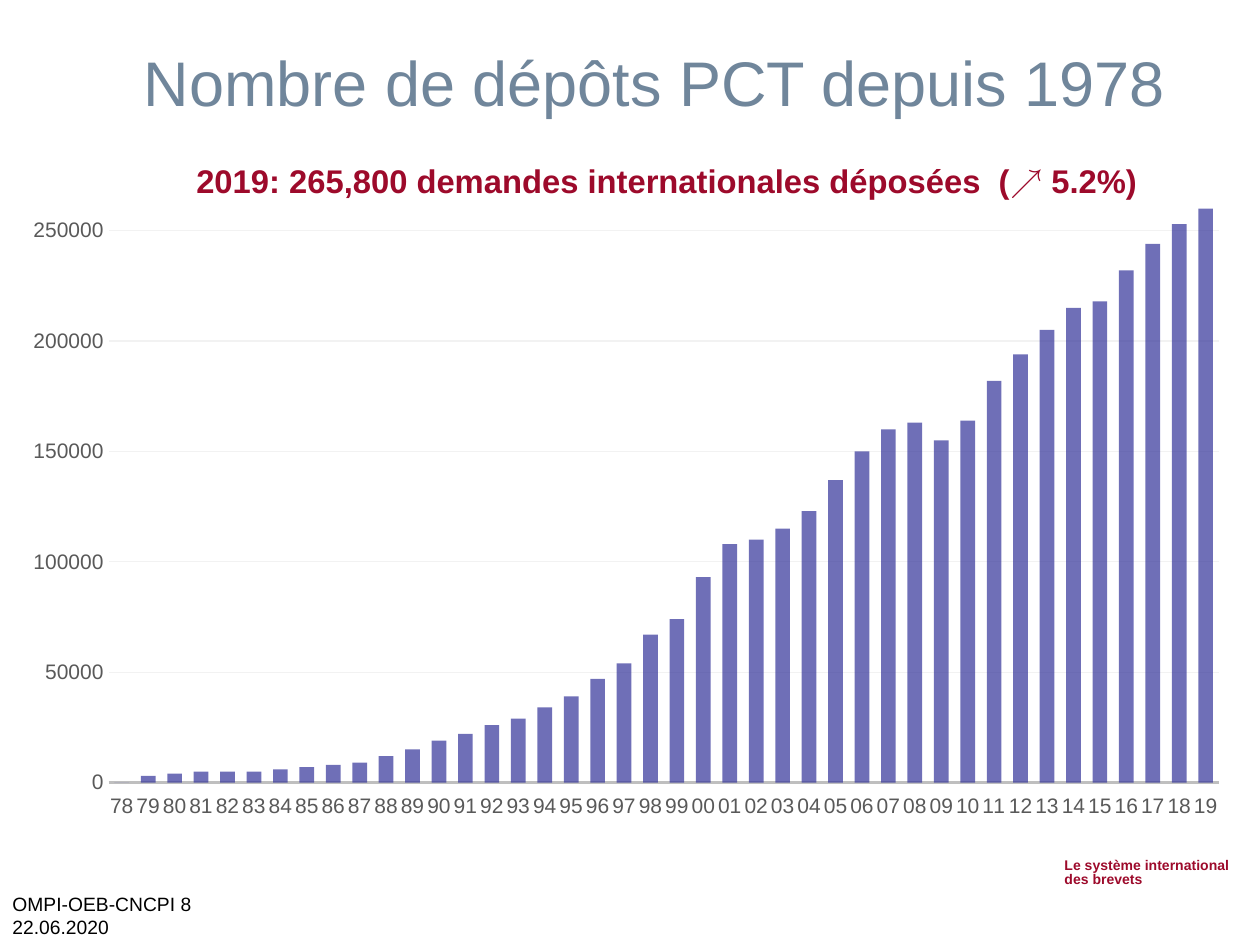
import lxml.etree
import pptx
import pptx.chart.data
import pptx.dml.color
import pptx.enum.chart
import pptx.enum.text
import pptx.oxml
import pptx.oxml.ns
import pptx.util
from pptx.util import Inches

FONT = "Arial"
RED = "9D0A2B"
AXIS_TEXT = "595959"
FILINGS_IN_THOUSANDS = [
    0, 3, 4, 5, 5, 5, 6, 7, 8, 9, 12, 15, 19, 22,
    26, 29, 34, 39, 47, 54, 67, 74, 93, 108, 110, 115, 123, 137,
    150, 160, 163, 155, 164, 182, 194, 205, 215, 218, 232, 244, 253, 266,
]


def color(hex_value):
    return pptx.dml.color.RGBColor.from_string(hex_value)


def format_font(font, size, hex_value, bold=False):
    font.name = FONT
    font.size = pptx.util.Pt(size)
    font.bold = bold
    font.color.rgb = color(hex_value)


def write_text(text_frame, text, *, size, hex_value, bold=False, align=None,
               anchor=pptx.enum.text.MSO_ANCHOR.TOP, line_spacing=None, wrap=True):
    """Write one paragraph for each line of text."""
    text_frame.auto_size = pptx.enum.text.MSO_AUTO_SIZE.NONE
    text_frame.word_wrap = wrap
    text_frame.vertical_anchor = anchor
    text_frame.text = text
    for paragraph in text_frame.paragraphs:
        paragraph.alignment = align
        paragraph.line_spacing = line_spacing
        for run in paragraph.runs:
            format_font(run.font, size, hex_value, bold)


def add_text(slide, text, left, top, width, height, **text_format):
    shape = slide.shapes.add_textbox(
        Inches(left), Inches(top), Inches(width), Inches(height))
    write_text(shape.text_frame, text, **text_format)


def add_title(slide, text):
    title = slide.shapes.title
    title.left, title.top = Inches(0.51), Inches(0.21)
    title.width, title.height = Inches(9.37), Inches(0.87)
    write_text(title.text_frame, text, size=36, hex_value="70869B",
               align=pptx.enum.text.PP_ALIGN.CENTER,
               anchor=pptx.enum.text.MSO_ANCHOR.MIDDLE)


def set_plot_area(chart, left, top, width, height):
    """Place the inner plot area, in fractions of the chart."""
    plot_area = chart._chartSpace.chart.plotArea
    for old_layout in plot_area.findall(pptx.oxml.ns.qn("c:layout")):
        plot_area.remove(old_layout)
    layout = pptx.oxml.parse_xml(
        f'<c:layout {pptx.oxml.ns.nsdecls("c")}><c:manualLayout>'
        '<c:layoutTarget val="inner"/><c:xMode val="edge"/><c:yMode val="edge"/>'
        f'<c:x val="{left}"/><c:y val="{top}"/><c:w val="{width}"/><c:h val="{height}"/>'
        '</c:manualLayout></c:layout>')
    plot_area.insert(0, layout)


def set_opacity(fill, percent):
    color_element = fill._xPr.find(".//" + pptx.oxml.ns.qn("a:srgbClr"))
    alpha = lxml.etree.SubElement(color_element, pptx.oxml.ns.qn("a:alpha"))
    alpha.set("val", str(percent * 1000))


def format_axes(chart):
    for axis in (chart.category_axis, chart.value_axis):
        axis.major_tick_mark = pptx.enum.chart.XL_TICK_MARK.NONE
        axis.minor_tick_mark = pptx.enum.chart.XL_TICK_MARK.NONE
        format_font(axis.tick_labels.font, 12, AXIS_TEXT)

    category_axis = chart.category_axis
    category_axis.tick_label_position = pptx.enum.chart.XL_TICK_LABEL_POSITION.LOW
    category_axis.format.line.color.rgb = color("BFBFBF")
    category_axis.format.line.width = pptx.util.Pt(1.25)

    value_axis = chart.value_axis
    value_axis.minimum_scale = 0
    value_axis.maximum_scale = 260000
    value_axis.major_unit = 50000
    value_axis.format.line.fill.background()
    value_axis.major_gridlines.format.line.color.rgb = color("F2F2F2")
    value_axis.major_gridlines.format.line.width = pptx.util.Pt(0.75)


def add_filings_chart(slide):
    chart_data = pptx.chart.data.CategoryChartData(number_format="General")
    chart_data.categories = [f"{year % 100:02d}" for year in range(1978, 2020)]
    chart_data.add_series("Series 1", [value * 1000 for value in FILINGS_IN_THOUSANDS])
    chart = slide.shapes.add_chart(
        pptx.enum.chart.XL_CHART_TYPE.COLUMN_CLUSTERED,
        Inches(0.12), Inches(1.55), Inches(9.76), Inches(5.04), chart_data).chart
    chart.has_legend = False
    chart.has_title = False
    format_font(chart.font, 10, "000000")

    plot = chart.plots[0]
    plot.gap_width = 80
    plot.overlap = 25
    plot.vary_by_categories = False
    fill = plot.series[0].format.fill
    fill.solid()
    fill.fore_color.rgb = color("333399")
    set_opacity(fill, 70)

    format_axes(chart)
    set_plot_area(chart, 0.076, 0.021, 0.903, 0.904)


def main():
    presentation = pptx.Presentation()
    presentation.slide_width = Inches(10)
    presentation.slide_height = Inches(7.5)
    slide = presentation.slides.add_slide(presentation.slide_layouts[5])

    # Footer texts
    add_text(slide, "Le système international\ndes brevets", 8.35, 6.77, 1.54, 0.33,
             size=8, hex_value=RED, bold=True, line_spacing=0.85, wrap=False)
    add_text(slide, "OMPI-OEB-CNCPI 8\n22.06.2020", 0, 6.9, 2.8, 0.6,
             size=11, hex_value="000000", anchor=pptx.enum.text.MSO_ANCHOR.BOTTOM)

    # Title, chart and headline figure
    add_title(slide, "Nombre de dépôts PCT depuis 1978")
    add_filings_chart(slide)
    add_text(slide, "2019: 265,800 demandes internationales déposées  (↗ 5.2%)",
             1.46, 1.23, 7.8, 0.55, size=18.7, hex_value=RED, bold=True)

    presentation.save("out.pptx")


if __name__ == "__main__":
    main()
